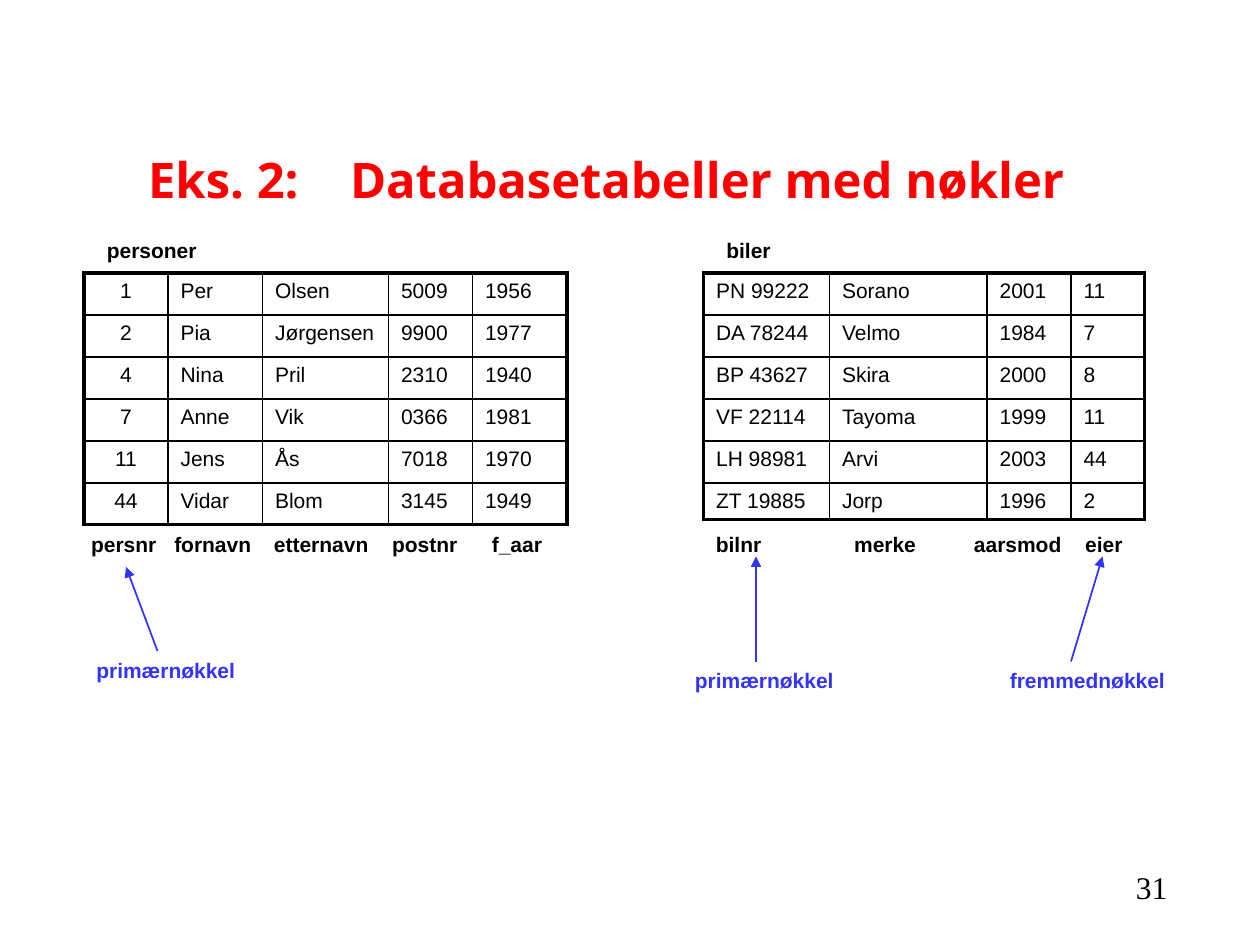
from dataclasses import dataclass

from lxml import etree
from pptx import Presentation
from pptx.dml.color import RGBColor
from pptx.enum import shapes, text
from pptx.oxml.ns import qn
from pptx.util import Pt

COLORS = {"ink": "000000", "title": "FF0000", "key": "3333FF"}
ROW_HEIGHT = 24
TABLE_TOP = 156
THICK, THIN = 2.25, 1


@dataclass(frozen=True)
class Label:
    wording: str
    left: float
    top: float
    width: float
    height: float = 21.6
    color: str = "ink"
    size: float = 12
    font: str = "Arial"
    bold: bool = True
    tabs: tuple[float, ...] = ()
    inset: float = 7.2
    anchor: text.MSO_ANCHOR = text.MSO_ANCHOR.TOP
    grows: bool = True


@dataclass(frozen=True)
class Relation:
    left: float
    widths: tuple[float, ...]
    last_height: float
    centred_columns: tuple[int, ...]
    rows: tuple[tuple[str, ...], ...]


@dataclass(frozen=True)
class Arrow:
    start: tuple[float, float]
    end: tuple[float, float]


LABELS = (
    Label("31", 642, 492.5, 42, 28.8, size=18, font="Times New Roman", bold=False),
    Label("Eks. 2:\tDatabasetabeller med nøkler", 31, 43.2, 630, 79.2, "title", 28,
          "Open Sans", tabs=(115.4,), inset=53.6, anchor=text.MSO_ANCHOR.BOTTOM, grows=False),
    Label("personer", 54, 132, 108),
    Label("\tpersnr\tfornavn\tetternavn\tpostnr\tf_aar", 42, 300, 288,
          tabs=(3, 50.5, 107.5, 175, 232)),
    Label("biler", 408, 132, 60),
    Label("bilnr\tmerke\taarsmod\teier", 402, 300, 252, tabs=(79, 147.5, 211)),
    Label("primærnøkkel", 48, 372, 108, color="key"),
    Label("primærnøkkel", 390, 378, 120, color="key"),
    Label("fremmednøkkel", 570, 378, 120, color="key"),
)

PERSONS = Relation(48, (48, 54, 72, 48, 54), ROW_HEIGHT, (0,), (
    ("1", "Per", "Olsen", "5009", "1956"),
    ("2", "Pia", "Jørgensen", "9900", "1977"),
    ("4", "Nina", "Pril", "2310", "1940"),
    ("7", "Anne", "Vik", "0366", "1981"),
    ("11", "Jens", "Ås", "7018", "1970"),
    ("44", "Vidar", "Blom", "3145", "1949"),
))
CARS = Relation(402, (72, 90, 48, 42), 21, (), (
    ("PN 99222", "Sorano", "2001", "11"),
    ("DA 78244", "Velmo", "1984", "7"),
    ("BP 43627", "Skira", "2000", "8"),
    ("VF 22114", "Tayoma", "1999", "11"),
    ("LH 98981", "Arvi", "2003", "44"),
    ("ZT 19885", "Jorp", "1996", "2"),
))

ARROWS = (
    Arrow((90, 372), (72, 324)),
    Arrow((432, 378), (432, 318)),
    Arrow((612, 378), (630, 318)),
)


def style_font(font, name: str, size: float, color: str, bold: bool) -> None:
    font.name, font.size, font.bold = name, Pt(size), bold
    font.color.rgb = RGBColor.from_string(COLORS[color])


def add_label(slide, label: Label) -> None:
    box = slide.shapes.add_textbox(
        Pt(label.left), Pt(label.top), Pt(label.width), Pt(label.height))
    frame = box.text_frame
    frame.word_wrap = True
    frame.margin_left = Pt(label.inset)
    frame.vertical_anchor = label.anchor
    if label.grows:
        frame.auto_size = text.MSO_AUTO_SIZE.SHAPE_TO_FIT_TEXT
    line = frame.paragraphs[0]
    line.text = label.wording
    if label.tabs:
        stops = etree.SubElement(line._p.get_or_add_pPr(), qn("a:tabLst"))
        for position in label.tabs:
            etree.SubElement(stops, qn("a:tab"), pos=str(int(Pt(position))), algn="l")
    style_font(line.font, label.font, label.size, label.color, label.bold)


def add_border(cell, side: str, width: float) -> None:
    edge = etree.SubElement(
        cell._tc.get_or_add_tcPr(), qn(f"a:ln{side}"), w=str(int(Pt(width))))
    fill = etree.SubElement(edge, qn("a:solidFill"))
    etree.SubElement(fill, qn("a:srgbClr"), val=COLORS["ink"])


def add_relation(slide, relation: Relation) -> None:
    last_row, last_column = len(relation.rows) - 1, len(relation.widths) - 1
    height = ROW_HEIGHT * last_row + relation.last_height
    table = slide.shapes.add_table(
        last_row + 1, last_column + 1, Pt(relation.left), Pt(TABLE_TOP),
        Pt(sum(relation.widths)), Pt(height)).table
    table.first_row = table.horz_banding = False
    for column, width in zip(table.columns, relation.widths):
        column.width = Pt(width)
    for r, values in enumerate(relation.rows):
        table.rows[r].height = Pt(relation.last_height if r == last_row else ROW_HEIGHT)
        for c, value in enumerate(values):
            cell = table.cell(r, c)
            outer = {"L": c == 0, "R": c == last_column, "T": r == 0, "B": r == last_row}
            for side, is_outer in outer.items():
                add_border(cell, side, THICK if is_outer else THIN)
            cell.fill.background()
            entry = cell.text_frame.paragraphs[0]
            entry.text = value
            if c in relation.centred_columns:
                entry.alignment = text.PP_ALIGN.CENTER
            style_font(entry.font, "Arial", 12, "ink", False)


def add_arrow(slide, arrow: Arrow) -> None:
    pointer = slide.shapes.add_connector(
        shapes.MSO_CONNECTOR.STRAIGHT, *map(Pt, arrow.start + arrow.end))
    pointer.line.width = Pt(1)
    pointer.line.color.rgb = RGBColor.from_string(COLORS["key"])
    properties = pointer._element.spPr
    etree.SubElement(properties.find(qn("a:ln")), qn("a:tailEnd"), type="triangle")
    etree.SubElement(properties, qn("a:effectLst"))


def main() -> None:
    """Build the slide with two keyed database tables."""
    deck = Presentation()
    deck.slide_width, deck.slide_height = Pt(720), Pt(540)
    slide = deck.slides.add_slide(deck.slide_layouts[6])
    for relation in (PERSONS, CARS):
        add_relation(slide, relation)
    for label in LABELS:
        add_label(slide, label)
    for arrow in ARROWS:
        add_arrow(slide, arrow)
    deck.save("out.pptx")


if __name__ == "__main__":
    main()
